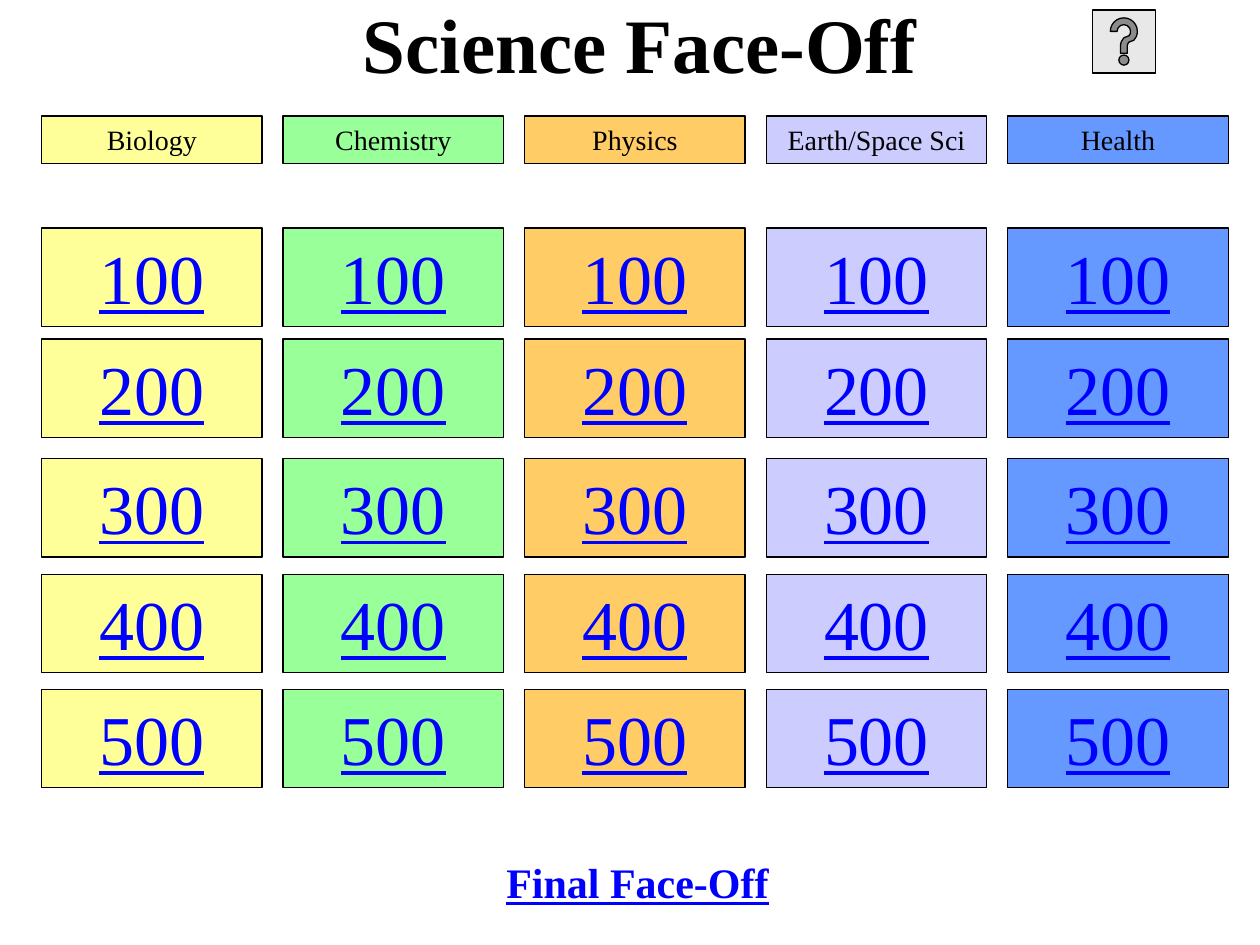
from dataclasses import dataclass
from typing import Optional

from pptx import Presentation
from pptx.dml.color import RGBColor
from pptx.enum.shapes import MSO_SHAPE as Preset
from pptx.enum.text import MSO_ANCHOR as Anchor, MSO_AUTO_SIZE as AutoSize, PP_ALIGN as Align
from pptx.util import Inches, Pt

COLORS = {
    "white": "FFFFFF", "black": "000000", "link": "0000FF", "button": "E8E8E8",
    "yellow": "FFFF99", "green": "99FF99", "orange": "FFCC66",
    "lavender": "CCCCFF", "blue": "6699FF",
}
FORMATS = {
    "title": {"size": Pt(44), "bold": True},
    "category": {"size": Pt(16)},
    "value": {"size": Pt(40), "underline": True},
    "final": {"size": Pt(24), "bold": True, "underline": True},
}
FONT = "Times New Roman"
SPACE_BEFORE_RATIO = 0.1


@dataclass
class Box:
    left: float
    top: float
    width: float
    height: float


@dataclass
class Category:
    name: str
    fill: str


CATEGORIES = [
    Category("Biology", "yellow"),
    Category("Chemistry", "green"),
    Category("Physics", "orange"),
    Category("Earth/Space Sci", "lavender"),
    Category("Health", "blue"),
]
VALUE_TOPS = {100: 1.81, 200: 2.69, 300: 3.64, 400: 4.56, 500: 5.47}
FIRST_LEFT, COLUMN_STEP, COLUMN_WIDTH = 0.33, 1.917, 1.75


def color(name: str) -> RGBColor:
    return RGBColor.from_string(COLORS[name])


def add_panel(slide, box: Box, fill: str, line: Optional[str] = "black", preset=Preset.RECTANGLE):
    shape = slide.shapes.add_shape(
        preset, Inches(box.left), Inches(box.top), Inches(box.width), Inches(box.height))
    shape.shadow.inherit = False
    shape.fill.solid()
    shape.fill.fore_color.rgb = color(fill)
    if line:
        shape.line.color.rgb = color(line)
        shape.line.width = Pt(0.75)
    else:
        shape.line.fill.background()
    return shape


def write_text(shape, text: str, style: str, text_color: str = "black",
               align=Align.CENTER, auto_size=AutoSize.SHAPE_TO_FIT_TEXT) -> None:
    frame = shape.text_frame
    frame.word_wrap = True
    frame.auto_size = auto_size
    frame.vertical_anchor = Anchor.TOP
    paragraph = frame.paragraphs[0]
    paragraph.alignment = align
    paragraph.space_before = Pt(FORMATS[style]["size"].pt * SPACE_BEFORE_RATIO)
    run = paragraph.add_run()
    run.text = text
    run.font.name = FONT
    run.font.color.rgb = color(text_color)
    for attribute, value in FORMATS[style].items():
        setattr(run.font, attribute, value)


def add_column(slide, index: int, category: Category) -> None:
    left = FIRST_LEFT + index * COLUMN_STEP
    header = add_panel(slide, Box(left, 0.92, COLUMN_WIDTH, 0.38), category.fill)
    write_text(header, category.name, "category")
    for value, top in VALUE_TOPS.items():
        cell = add_panel(slide, Box(left, top, COLUMN_WIDTH, 0.78), category.fill)
        write_text(cell, str(value), "value", "link")


def main() -> None:
    presentation = Presentation()
    presentation.slide_width = Inches(10)
    presentation.slide_height = Inches(7.5)
    slide = presentation.slides.add_slide(presentation.slide_layouts[6])

    # Title
    title = add_panel(slide, Box(0.83, -0.08, 8.5, 0.67), "white", line=None)
    write_text(title, "Science Face-Off", "title", auto_size=AutoSize.NONE)

    # Game board
    for index, category in enumerate(CATEGORIES):
        add_column(slide, index, category)

    # Help button
    add_panel(slide, Box(8.67, 0.08, 0.5, 0.5), "button", preset=Preset.ACTION_BUTTON_HELP)

    # Final round
    final = slide.shapes.add_textbox(Inches(3.92), Inches(6.75), Inches(2.58), Inches(0.5))
    write_text(final, "Final Face-Off", "final", "link", Align.LEFT)

    presentation.save("out.pptx")


if __name__ == "__main__":
    main()
